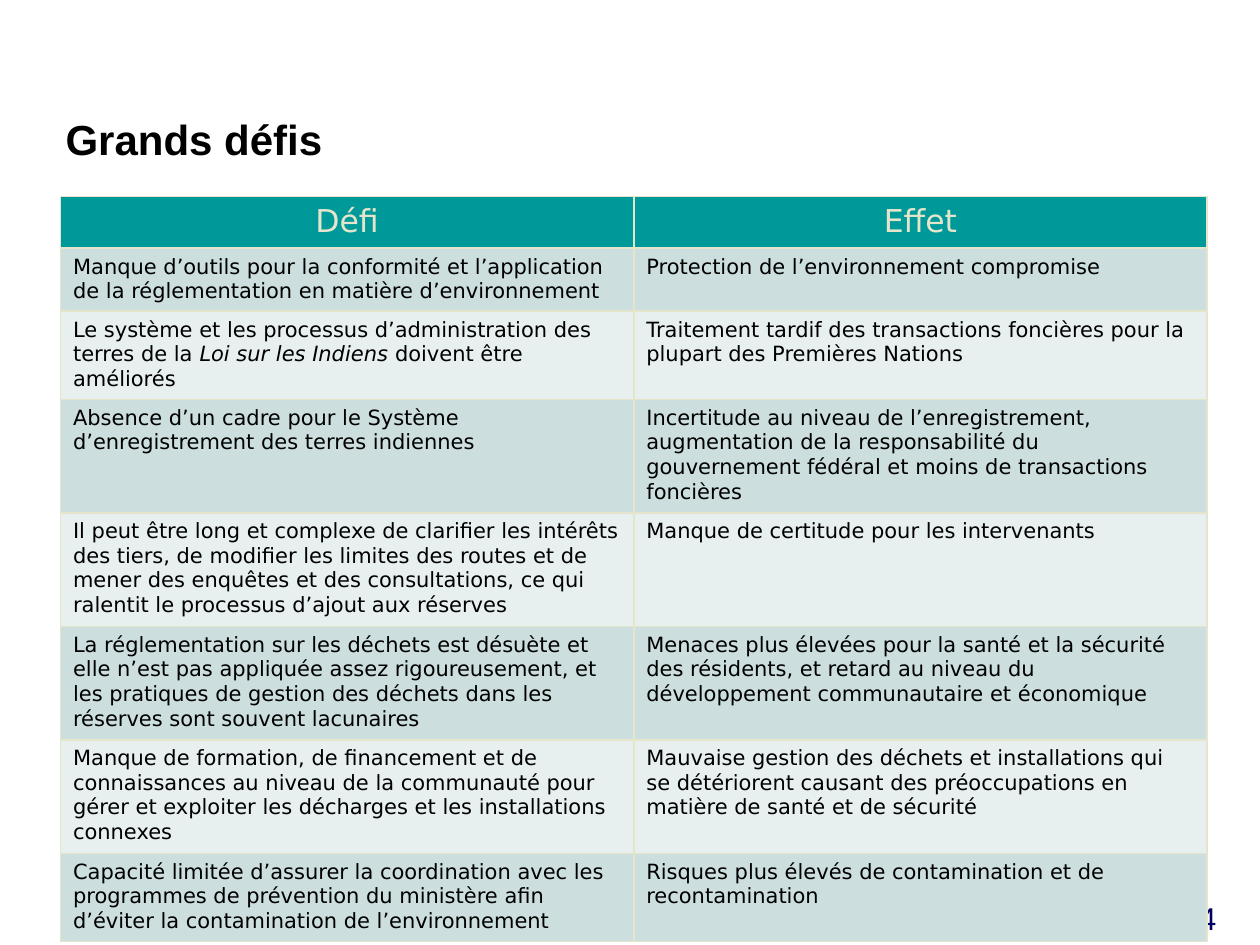
from lxml.etree import SubElement as Sub
from pptx import Presentation
from pptx.dml.color import RGBColor as Rgb
from pptx.enum.text import MSO_ANCHOR as Anchor, MSO_AUTO_SIZE as Fit, PP_ALIGN as Align
from pptx.oxml.ns import qn
from pptx.util import Inches as In, Pt

TITLE = "Grands défis"
PAGE = "4"
HEAD = ("Défi", "Effet")
ROWS = [
    ("Manque d’outils pour la conformité et l’application de la réglementation en matière d’environnement",
     "Protection de l’environnement compromise"),
    ("Le système et les processus d’administration des terres de la *Loi sur les Indiens *doivent être améliorés",
     "Traitement tardif des transactions foncières pour la plupart des Premières Nations"),
    ("Absence d’un cadre pour le Système d’enregistrement des terres indiennes",
     "Incertitude au niveau de l’enregistrement, augmentation de la responsabilité du gouvernement fédéral et moins de transactions foncières"),
    ("Il peut être long et complexe de clarifier les intérêts des tiers, de modifier les limites des routes et de mener des enquêtes et des consultations, ce qui ralentit le processus d’ajout aux réserves",
     "Manque de certitude pour les intervenants"),
    ("La réglementation sur les déchets est désuète et elle n’est pas appliquée assez rigoureusement, et les pratiques de gestion des déchets dans les réserves sont souvent lacunaires",
     "Menaces plus élevées pour la santé et la sécurité des résidents, et retard au niveau du développement communautaire et économique"),
    ("Manque de formation, de financement et de connaissances au niveau de la communauté pour gérer et exploiter les décharges et les installations connexes",
     "Mauvaise gestion des déchets et installations qui se détériorent causant des préoccupations en matière de santé et de sécurité"),
    ("Capacité limitée d’assurer la coordination avec les programmes de prévention du ministère afin d’éviter la contamination de l’environnement",
     "Risques plus élevés de contamination et de recontamination"),
]
HUES = {"head": "009999", "odd": "CCDEDE", "even": "E7EFEF",
        "line": "E5E5CC", "text": "000000", "page": "000066"}
FORMS = {
    "title": {"name": "Arial", "size": Pt(24), "bold": True},
    "page": {"name": "Arial", "size": Pt(18)},
    "head": {"name": "DejaVu Sans", "size": Pt(18)},
    "body": {"name": "DejaVu Sans", "size": Pt(12)},
}


def write(frame, text, form, hue, align=Align.LEFT):
    para = frame.paragraphs[0]
    para.alignment = align
    for spot, part in enumerate(text.split("*")):
        run = para.add_run()
        run.text = part
        for key, value in FORMS[form].items():
            setattr(run.font, key, value)
        run.font.italic = spot % 2 == 1
        run.font.color.rgb = Rgb.from_string(HUES[hue])
    return para


def edge(cell):
    props = cell._tc.get_or_add_tcPr()
    for side in ("lnL", "lnR", "lnT", "lnB"):
        line = Sub(props, qn(f"a:{side}"), w=str(Pt(1)))
        Sub(Sub(line, qn("a:solidFill")), qn("a:srgbClr"), val=HUES["line"])


def place(shape, box):
    for key, value in zip(("left", "top", "width", "height"), box):
        setattr(shape, key, In(value))


deck = Presentation()
deck.slide_width, deck.slide_height = In(10), In(7.5)
slide = deck.slides.add_slide(deck.slide_layouts[5])

page = slide.shapes.add_textbox(In(9.17), In(7.12), In(0.83), In(0.33))
page.text_frame.word_wrap = True
page.text_frame.vertical_anchor = Anchor.MIDDLE
write(page.text_frame, PAGE, "page", "page", Align.CENTER)

title = slide.shapes.title
place(title, (0.42, 0.92, 9.17, 0.33))
title.text_frame.auto_size = Fit.NONE
title.text_frame.vertical_anchor = Anchor.TOP
write(title.text_frame, TITLE, "title", "text").line_spacing = Pt(24)

count = len(ROWS) + 1
grid = slide.shapes.add_table(count, len(HEAD), In(0.48), In(1.56), In(9.1), In(0.41 * count)).table
for y, texts in enumerate([HEAD, *ROWS]):
    band = "head" if y == 0 else "odd" if y % 2 else "even"
    look = ("head", "line", Align.CENTER) if y == 0 else ("body", "text")
    for x, text in enumerate(texts):
        cell = grid.cell(y, x)
        edge(cell)
        cell.fill.solid()
        cell.fill.fore_color.rgb = Rgb.from_string(HUES[band])
        write(cell.text_frame, text, *look)

deck.save("out.pptx")
